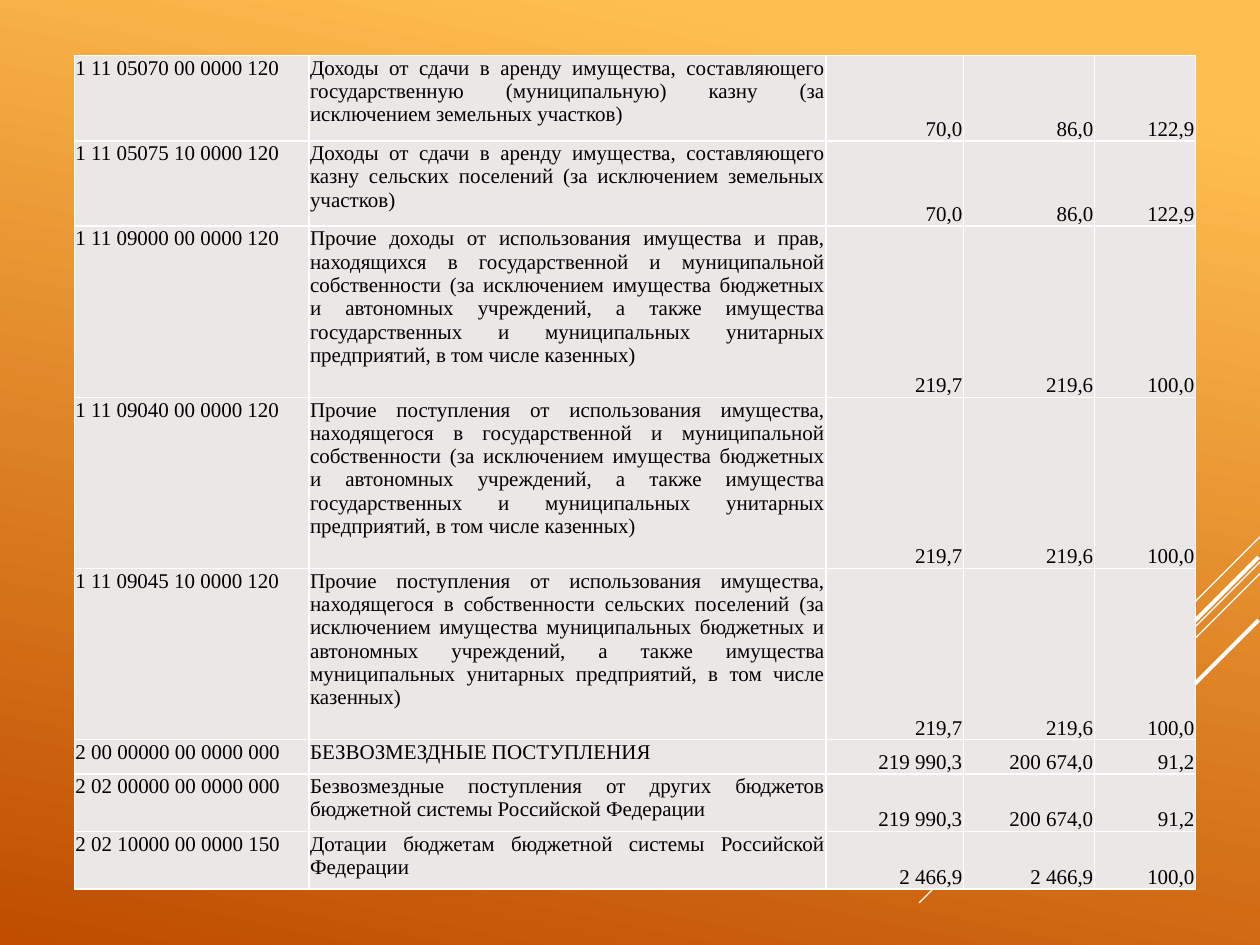
import pptx
import pptx.dml.color
import pptx.enum.shapes
import pptx.enum.text
import pptx.oxml.ns
import pptx.util
from dataclasses import dataclass
from lxml import etree

Cm = pptx.util.Cm
Pt = pptx.util.Pt
RGB = pptx.dml.color.RGBColor.from_string
ALIGN = pptx.enum.text.PP_ALIGN
ANCHOR = pptx.enum.text.MSO_ANCHOR
qn = pptx.oxml.ns.qn


@dataclass(frozen=True)
class Theme:
    font: str = "Times New Roman"
    size: float = 12
    text: str = "000000"
    cell: str = "ECE7E7"
    line: str = "FFFFFF"
    border: float = 1
    glow: str = "FFBF50"
    ember: str = "C04D00"


theme = Theme()


def write_cell(cell, text, align=ALIGN.LEFT, anchor=ANCHOR.TOP):
    """Fill, border and write one table cell."""
    cell.margin_left = cell.margin_right = cell.margin_top = Cm(0.02)
    cell.margin_bottom = 0
    cell.vertical_anchor = anchor
    properties = cell._tc.get_or_add_tcPr()
    for side in ("a:lnL", "a:lnR", "a:lnT", "a:lnB"):
        border = etree.SubElement(properties, qn(side), w=str(Pt(theme.border)))
        paint = etree.SubElement(border, qn("a:solidFill"))
        etree.SubElement(paint, qn("a:srgbClr"), val=theme.line)
    cell.fill.solid()
    cell.fill.fore_color.rgb = RGB(theme.cell)
    paragraph = cell.text_frame.paragraphs[0]
    paragraph.alignment = align
    run = paragraph.add_run()
    run.text = text
    run.font.name = theme.font
    run.font.size = Pt(theme.size)
    run.font.color.rgb = RGB(theme.text)


presentation = pptx.Presentation()
presentation.slide_width = Cm(25.4)
presentation.slide_height = Cm(19.05)
slide = presentation.slides.add_slide(presentation.slide_layouts[6])

# Background
backdrop = slide.background.fill
backdrop.gradient()
backdrop.gradient_angle = 258
for stop, color, position in zip(
    backdrop.gradient_stops, (theme.glow, theme.ember), (0.1, 1)
):
    stop.color.rgb = RGB(color)
    stop.position = position

# Diagonal rays at 45 degrees: right end x, y, horizontal run, line width
rays = [
    (25.4, 10.82, 2.11, 0.75),
    (25.4, 11.33, 6.87, 0.75),
    (25.4, 11.56, 4.37, 0.75),
    (25.37, 11.23, 3.99, 2.25),
    (25.37, 12.5, 2.89, 2.25),
]
for x, y, reach, width in rays:
    ray = slide.shapes.add_connector(
        pptx.enum.shapes.MSO_CONNECTOR.STRAIGHT,
        Cm(x), Cm(y), Cm(x - reach), Cm(y + reach),
    )
    ray.line.color.rgb = RGB(theme.line)
    ray.line.width = Pt(width)
    etree.SubElement(ray._element.spPr, qn("a:effectLst"))

# Revenue table: row height, code, name, plan, actual, percent
revenues = [
    (1.72, "1 11 05070 00 0000 120",
     "Доходы от сдачи в аренду имущества, составляющего государственную "
     "(муниципальную) казну (за исключением земельных участков)",
     "70,0", "86,0", "122,9"),
    (1.72, "1 11 05075 10 0000 120",
     "Доходы от сдачи в аренду имущества, составляющего казну сельских "
     "поселений (за исключением земельных участков)",
     "70,0", "86,0", "122,9"),
    (3.45, "1 11 09000 00 0000 120",
     "Прочие доходы от использования имущества и прав, находящихся в "
     "государственной и муниципальной собственности (за исключением "
     "имущества бюджетных и автономных учреждений, а также имущества "
     "государственных и муниципальных унитарных предприятий, в том числе "
     "казенных)",
     "219,7", "219,6", "100,0"),
    (3.45, "1 11 09040 00 0000 120",
     "Прочие поступления от использования имущества, находящегося в "
     "государственной и муниципальной собственности (за исключением "
     "имущества бюджетных и автономных учреждений, а также имущества "
     "государственных и муниципальных унитарных предприятий, в том числе "
     "казенных)",
     "219,7", "219,6", "100,0"),
    (3.45, "1 11 09045 10 0000 120",
     "Прочие поступления от использования имущества, находящегося в "
     "собственности сельских поселений (за исключением имущества "
     "муниципальных бюджетных и автономных учреждений, а также имущества "
     "муниципальных унитарных предприятий, в том числе казенных)",
     "219,7", "219,6", "100,0"),
    (0.69, "2 00 00000 00 0000 000", "БЕЗВОЗМЕЗДНЫЕ ПОСТУПЛЕНИЯ",
     "219 990,3", "200 674,0", "91,2"),
    (1.16, "2 02 00000 00 0000 000",
     "Безвозмездные поступления от других бюджетов бюджетной системы "
     "Российской Федерации",
     "219 990,3", "200 674,0", "91,2"),
    (1.16, "2 02 10000 00 0000 150",
     "Дотации бюджетам бюджетной системы Российской Федерации",
     "2 466,9", "2 466,9", "100,0"),
]
column_widths = [4.73, 10.42, 2.77, 2.64, 2.04]
amount = (ALIGN.RIGHT, ANCHOR.BOTTOM)
column_formats = [
    (ALIGN.LEFT, ANCHOR.TOP), (ALIGN.JUSTIFY, ANCHOR.TOP), amount, amount, amount,
]

budget = slide.shapes.add_table(
    len(revenues), len(column_widths), Cm(1.5), Cm(1.12),
    Cm(sum(column_widths)), Cm(sum(row[0] for row in revenues)),
).table
budget.first_row = False
budget.horz_banding = False
for column, width in zip(budget.columns, column_widths):
    column.width = Cm(width)
for row, (height, *entries) in zip(budget.rows, revenues):
    row.height = Cm(height)
    for cell, entry, (align, anchor) in zip(row.cells, entries, column_formats):
        write_cell(cell, entry, align=align, anchor=anchor)

presentation.save("out.pptx")
